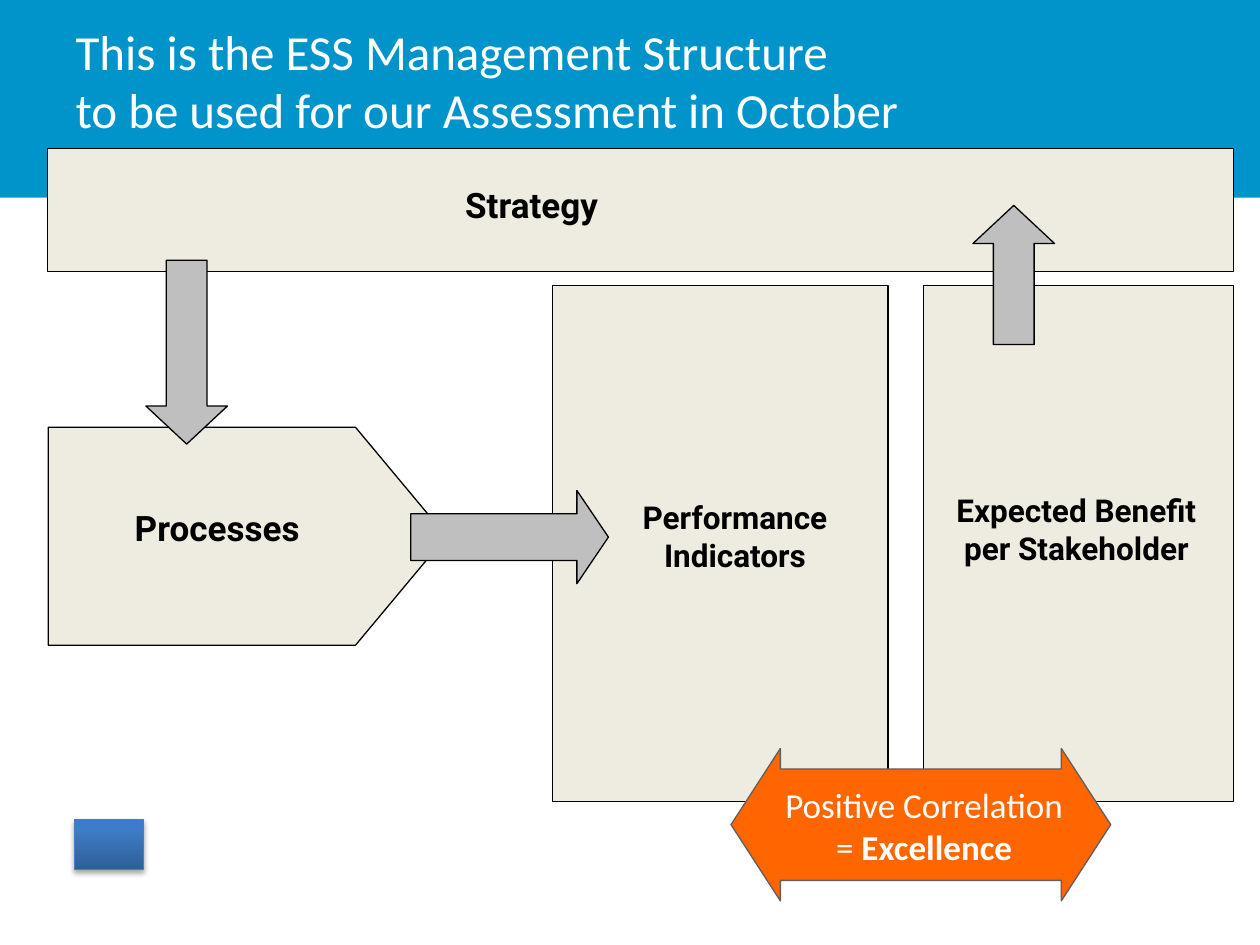
import copy
import dataclasses

import pptx
import pptx.dml.color
import pptx.enum.shapes
import pptx.enum.text
import pptx.oxml
import pptx.oxml.ns
import pptx.util

Pt = pptx.util.Pt
RGB = pptx.dml.color.RGBColor.from_string
MSO = pptx.enum.shapes.MSO_SHAPE
ALIGN = pptx.enum.text.PP_ALIGN


@dataclasses.dataclass(frozen=True)
class Theme:
    banner: str = "0094CA"
    panel: str = "EEECE1"
    arrow: str = "BFBFBF"
    accent: str = "FF6600"
    accent_line: str = "5F5F5F"
    button_line: str = "4B7EBC"
    button_stops: tuple = ((0, "2F5F99"), (0.8, "3D7CC7"), (1, "3A7CCB"))
    ink: str = "000000"
    paper: str = "FFFFFF"
    title_size: int = 28
    large: int = 20
    small: int = 18
    line_width: float = 0.75
    inset: float = 14.4
    heading_font: str = "Calibri"
    label_font: str = "Roboto"


THEME = Theme()


@dataclasses.dataclass(frozen=True)
class Block:
    kind: MSO
    left: float
    top: float
    width: float
    height: float
    fill: str = THEME.panel
    line: str | None = THEME.ink
    adjustments: tuple[float, ...] = ()
    rotation: float = 0


@dataclasses.dataclass(frozen=True)
class Label:
    lines: tuple[str, ...]
    left: float
    top: float
    width: float
    height: float
    size: int = THEME.small
    align: ALIGN = ALIGN.CENTER


PANEL_TOP, PANEL_HEIGHT = 163, 295.2
DOWN_ARROW = (0.5, 0.466)

BANNER = Block(MSO.RECTANGLE, 0, 0, 720, 113, THEME.banner, None)
BLOCKS = (
    Block(MSO.RECTANGLE, 27.2, 85, 677.5, 70.2),
    Block(MSO.RECTANGLE, 527.6, PANEL_TOP, 177.1, PANEL_HEIGHT),
    Block(MSO.DOWN_ARROW, 556, 117.4, 46.6, 79.5, THEME.arrow,
          adjustments=DOWN_ARROW, rotation=180),
    Block(MSO.PENTAGON, 27.6, 244.2, 227.5, 124.5, adjustments=(0.417,)),
    Block(MSO.DOWN_ARROW, 83.4, 148.8, 46.6, 105, THEME.arrow,
          adjustments=DOWN_ARROW),
    Block(MSO.RECTANGLE, 315.8, PANEL_TOP, 191.6, PANEL_HEIGHT),
    Block(MSO.RIGHT_ARROW, 234.7, 280.3, 113, 53.3, THEME.arrow,
          adjustments=(0.5, 0.338)),
    Block(MSO.LEFT_RIGHT_ARROW, 417.7, 427.7, 217, 87.1, THEME.accent,
          THEME.accent_line, (0.731, 0.324)),
)
LABELS = (
    Label(("Strategy",), 243.8, 92.7, 120, 52.6, THEME.large),
    Label(("Expected Benefit", "per Stakeholder"), 519, 266.4, 192.2, 76.3),
    Label(("Performance", "Indicators"), 325.7, 270.1, 188.6, 76.3),
    Label(("Processes",), 62.6, 277.4, 144.7, 52.6, THEME.large, ALIGN.LEFT),
)


def style_font(font, name: str, size: int, color: str) -> None:
    font.name = name
    font.size = Pt(size)
    font.color.rgb = RGB(color)


def add_block(s, block: Block):
    sp = s.shapes.add_shape(block.kind, Pt(block.left), Pt(block.top),
                            Pt(block.width), Pt(block.height))
    sp.shadow.inherit = False
    sp.rotation = block.rotation
    for i, value in enumerate(block.adjustments):
        sp.adjustments[i] = value
    sp.fill.solid()
    sp.fill.fore_color.rgb = RGB(block.fill)
    if block.line is None:
        sp.line.fill.background()
    else:
        sp.line.color.rgb = RGB(block.line)
        sp.line.width = Pt(THEME.line_width)
    return sp


def add_text_frame(s, left: float, top: float, width: float, height: float):
    sp = s.shapes.add_textbox(Pt(left), Pt(top), Pt(width), Pt(height))
    tf = sp.text_frame
    tf.word_wrap = True
    tf.margin_left = tf.margin_right = Pt(THEME.inset)
    tf.margin_top = tf.margin_bottom = Pt(THEME.inset)
    return tf


def add_label(s, label: Label) -> None:
    tf = add_text_frame(s, label.left, label.top, label.width, label.height)
    tf.text = "\n".join(label.lines)
    for p in tf.paragraphs:
        p.alignment = label.align
        style_font(p.font, THEME.label_font, label.size, THEME.ink)
        p.font.bold = True


def add_correlation(s) -> None:
    tf = add_text_frame(s, 399.6, 433.4, 257, 77)
    p = tf.paragraphs[0]
    p.alignment = ALIGN.CENTER
    style_font(p.font, THEME.heading_font, THEME.large, THEME.paper)
    p.text = "Positive Correlation\v= "
    r = p.add_run()
    r.text = "Excellence"
    r.font.bold = True


def add_button(s) -> None:
    sp = add_block(s, Block(MSO.ACTION_BUTTON_CUSTOM, 42.4, 468.4, 39.8, 28.3,
                            line=THEME.button_line))
    sp.fill.gradient()
    sp.fill.gradient_angle = 90
    gradient = sp._element.spPr.find(pptx.oxml.ns.qn("a:gradFill"))
    stops = gradient.find(pptx.oxml.ns.qn("a:gsLst"))
    stops.append(copy.deepcopy(stops[-1]))
    for stop, (position, color) in zip(sp.fill.gradient_stops, THEME.button_stops):
        stop.position = position
        stop.color.rgb = RGB(color)
    effects = sp._element.spPr.find(pptx.oxml.ns.qn("a:effectLst"))
    effects.append(pptx.oxml.parse_xml(
        f'<a:outerShdw {pptx.oxml.ns.nsdecls("a")} blurRad="{Pt(3.1)}" '
        f'dist="{Pt(1.8)}" dir="5400000" rotWithShape="0">'
        f'<a:srgbClr val="{THEME.ink}"><a:alpha val="35000"/></a:srgbClr>'
        '</a:outerShdw>'))


def set_title(s) -> None:
    title = s.shapes.title
    title.left, title.top, title.width, title.height = (
        Pt(36), Pt(15.1), Pt(648), Pt(61.2))
    tf = title.text_frame
    tf.auto_size = pptx.enum.text.MSO_AUTO_SIZE.NONE
    tf.vertical_anchor = pptx.enum.text.MSO_ANCHOR.MIDDLE
    p = tf.paragraphs[0]
    p.text = ("This is the ESS Management Structure\v"
              "to be used for our Assessment in October")
    p.alignment = ALIGN.LEFT
    style_font(p.font, THEME.heading_font, THEME.title_size, THEME.paper)


def main() -> None:
    prs = pptx.Presentation()
    prs.slide_width, prs.slide_height = Pt(720), Pt(540)
    s = prs.slides.add_slide(prs.slide_layouts[5])
    banner = add_block(s, BANNER)
    s.shapes.title._element.addprevious(banner._element)
    set_title(s)
    for block in BLOCKS:
        add_block(s, block)
    for label in LABELS:
        add_label(s, label)
    add_correlation(s)
    add_button(s)
    prs.save("out.pptx")


if __name__ == "__main__":
    main()
